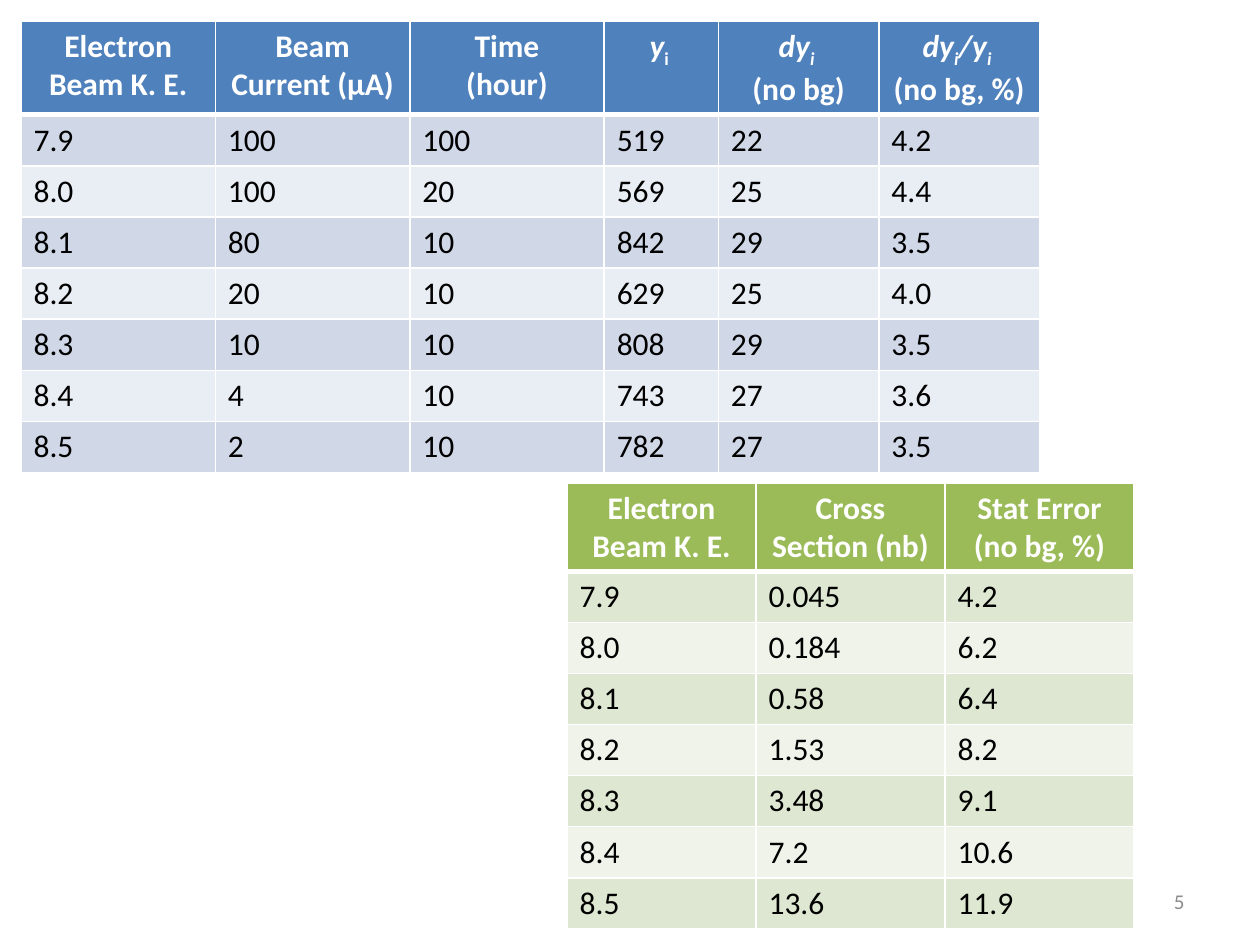
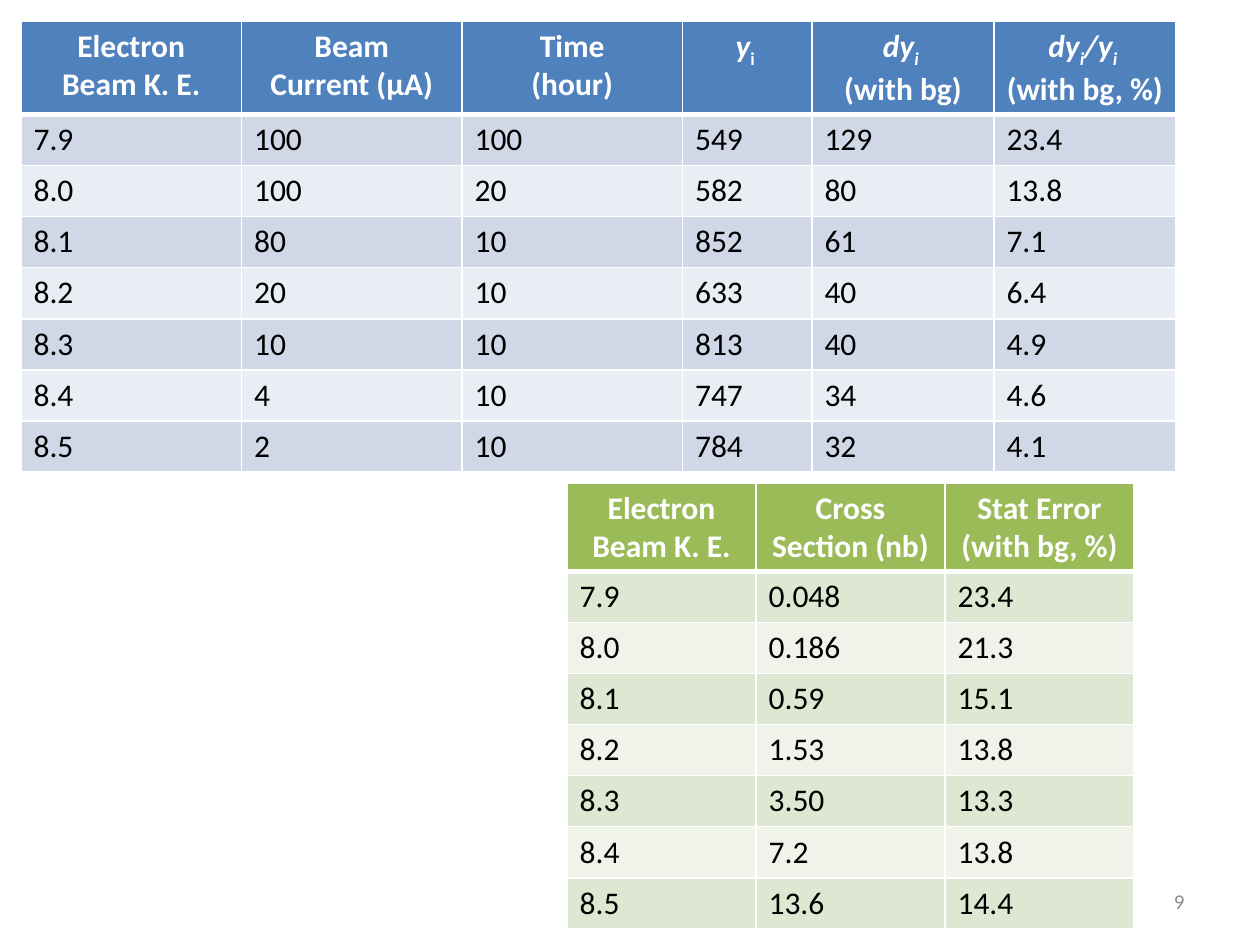
"""Build two slides of beam-run tables, without and with background."""
from lxml.etree import SubElement
from pptx import Presentation
from pptx.dml.color import RGBColor
from pptx.enum.text import MSO_ANCHOR, PP_ALIGN
from pptx.oxml.ns import qn
from pptx.util import Pt

BEAM = ["7.9", "8.0", "8.1", "8.2", "8.3", "8.4", "8.5"]
CURRENT = ["100", "100", "80", "20", "10", "4", "2"]
HOURS = ["100", "20", "10", "10", "10", "10", "10"]

RUNS = [
    {
        "page": "5", "label": "no bg", "width": 582,
        "yield": ["519", "569", "842", "629", "808", "743", "782"],
        "error": ["22", "25", "29", "25", "29", "27", "27"],
        "ratio": ["4.2", "4.4", "3.5", "4.0", "3.5", "3.6", "3.5"],
        "cross": ["0.045", "0.184", "0.58", "1.53", "3.48", "7.2", "13.6"],
        "stat": ["4.2", "6.2", "6.4", "8.2", "9.1", "10.6", "11.9"],
    },
    {
        "page": "9", "label": "with bg", "width": 660,
        "yield": ["549", "582", "852", "633", "813", "747", "784"],
        "error": ["129", "80", "61", "40", "40", "34", "32"],
        "ratio": ["23.4", "13.8", "7.1", "6.4", "4.9", "4.6", "4.1"],
        "cross": ["0.048", "0.186", "0.59", "1.53", "3.50", "7.2", "13.6"],
        "stat": ["23.4", "21.3", "15.1", "13.8", "13.3", "13.8", "14.4"],
    },
]

PLAIN, SLANT = (False, False), (True, False)
SUB, SLANT_SUB = (False, True), (True, True)
Y = [("y", SLANT), ("i ", SUB)]
DY = [("dy", SLANT), ("i ", SLANT_SUB)]
RATIO = [("dy", SLANT), ("i", SLANT_SUB), ("/y", SLANT), ("i ", SLANT_SUB)]
ENERGY = ["Electron", "Beam K. E."]

HEX = {"white": "FFFFFF", "black": "000000", "gray": "8C8C8C"}
BLUE = {"head": "4F81BD", "odd": "D0D8E8", "even": "E9EDF4"}
GREEN = {"head": "9BBB59", "odd": "DEE7D1", "even": "EFF3EA"}
FONT = "Calibri"
ROW, TALL = 29.2, 255
SHARES = [126, 126, 126, 74, 104, 104]


def color(code):
    return RGBColor.from_string(code)


def style(para, size, code, align, bold=False):
    para.alignment = align
    font = para.font
    font.name, font.size, font.bold = FONT, Pt(size), bold
    font.color.rgb = color(code)


def write(para, line):
    parts = [(line, PLAIN)] if isinstance(line, str) else line
    for text, (slant, low) in parts:
        run = para.add_run()
        run.text = text
        if slant:
            run.font.italic = True
        if low:
            run.font._element.set("baseline", "-25000")


def border(cell, top, bottom):
    props = cell._tc.get_or_add_tcPr()
    sides = [("a:lnL", 1), ("a:lnR", 1), ("a:lnT", top), ("a:lnB", bottom)]
    for spot, (tag, width) in enumerate(sides):
        line = SubElement(props, qn(tag), w=str(Pt(width)))
        fill = SubElement(line, qn("a:solidFill"))
        SubElement(fill, qn("a:srgbClr"), val=HEX["white"])
        props.insert(spot, line)


def fill_cell(cell, lines, row, tint):
    head = row == 0
    frame = cell.text_frame
    for spot, line in enumerate(lines):
        para = frame.add_paragraph() if spot else frame.paragraphs[0]
        write(para, line)
        style(para, 18, HEX["white" if head else "black"],
              PP_ALIGN.CENTER if head else PP_ALIGN.LEFT, head)
    cell.fill.solid()
    band = "head" if head else "odd" if row % 2 else "even"
    cell.fill.fore_color.rgb = color(tint[band])
    border(cell, 3 if row == 1 else 1, 3 if head else 1)


def add_grid(slide, left, top, widths, heads, data, tint):
    rows = [heads] + [[[text] for text in row] for row in zip(*data)]
    frame = slide.shapes.add_table(len(rows), len(heads), Pt(left), Pt(top),
                                   Pt(sum(widths)), Pt(TALL))
    table = frame.table
    for col, width in zip(table.columns, widths):
        col.width = Pt(width)
    for row, cells in enumerate(rows):
        table.rows[row].height = Pt(ROW)
        for col, lines in enumerate(cells):
            fill_cell(table.cell(row, col), lines, row, tint)
    frame.height = Pt(TALL)


def add_page(slide, text):
    box = slide.shapes.add_textbox(Pt(516), Pt(500.5), Pt(168), Pt(28.75))
    frame = box.text_frame
    frame.word_wrap = True
    frame.vertical_anchor = MSO_ANCHOR.MIDDLE
    para = frame.paragraphs[0]
    write(para, text)
    style(para, 12, HEX["gray"], PP_ALIGN.RIGHT)


def add_run_slide(deck, run):
    slide = deck.slides.add_slide(deck.slide_layouts[6])
    note, share = f"({run['label']})", f"({run['label']}, %)"
    scale = run["width"] / sum(SHARES)
    add_grid(slide, 12, 12, [part * scale for part in SHARES],
             [ENERGY, ["Beam", "Current (µA)"], ["Time", "(hour)"],
              [Y], [DY, note], [RATIO, share]],
             [BEAM, CURRENT, HOURS, run["yield"], run["error"], run["ratio"]],
             BLUE)
    add_page(slide, run["page"])
    add_grid(slide, 324, 276, [108] * 3,
             [ENERGY, ["Cross Section (nb)"], ["Stat Error", share]],
             [BEAM, run["cross"], run["stat"]], GREEN)


def main():
    deck = Presentation()
    deck.slide_width, deck.slide_height = Pt(720), Pt(540)
    for run in RUNS:
        add_run_slide(deck, run)
    deck.save("out.pptx")


if __name__ == "__main__":
    main()
